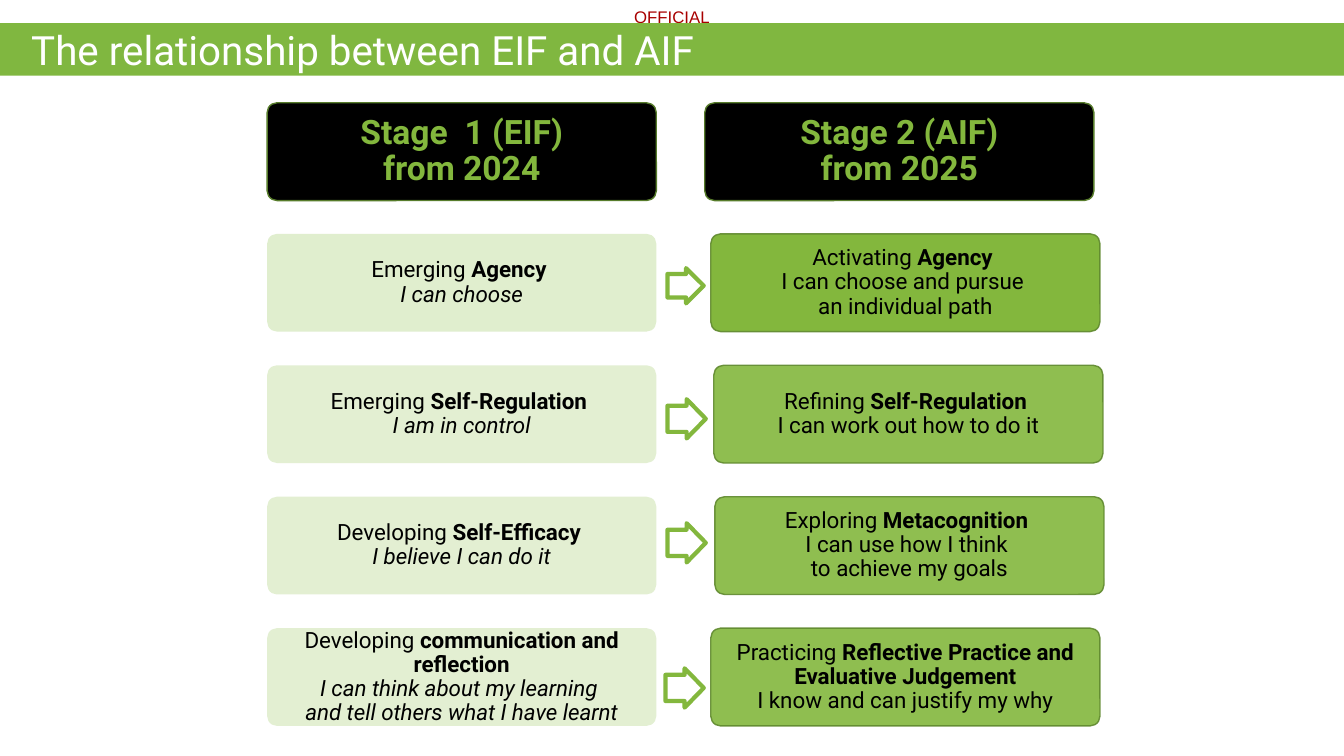
from lxml import etree
from pptx import Presentation
from pptx.dml.color import RGBColor
from pptx.enum import shapes, text
from pptx.oxml import ns
from pptx.util import Inches, Pt

WHITE = RGBColor(0xFF, 0xFF, 0xFF)
BLACK = RGBColor(0, 0, 0)
RED = RGBColor(0xA8, 0, 0)
BAND_GREEN = RGBColor(0x80, 0xB7, 0x40)
GREEN = RGBColor(0x83, 0xB7, 0x3D)
PALE_GREEN = RGBColor(0xE0, 0xEE, 0xCE)
HEADING_EDGE = RGBColor(0x57, 0x7C, 0x2B)
CARD_EDGE = RGBColor(0x60, 0x89, 0x2F)

CARD_WIDTH, CARD_HEIGHT = 3.86, 0.97
CARD_TOP, CARD_PITCH = 2.32, 1.304
LEFT_COLUMN, RIGHT_COLUMN = 2.65, 6.99

STAGE_ONE = [
    ("Emerging ", "Agency ", ["I can choose"]),
    ("Emerging\u00a0", "Self-Regulation\u00a0", ["I am in\u00a0control"]),
    ("Developing\u00a0", "Self-Efficacy\u00a0", ["I\u00a0believe I can do it"]),
    ("Developing ", "communication and reflection",
     ["I can think about my learning ", "and tell others what I have learnt"]),
]
STAGE_TWO = [
    ("Activating ", "Agency ", ["I can choose and pursue ", "an individual path"]),
    ("Refining ", "Self-Regulation ", ["I can work out how to do it"]),
    ("Exploring ", "Metacognition ", ["I can use how I think ", "to achieve my goals"]),
    ("Practicing ", "Reflective Practice and Evaluative Judgement",
     ["I know and can justify my why"]),
]
STAGE_TWO_LEFTS = [7.05, 7.08, 7.09, 7.05]
ARROWS = [(6.62, 2.66, 0.36, 0.35), (6.62, 3.96, 0.38, 0.39),
          (6.62, 5.19, 0.38, 0.39), (6.6, 6.63, 0.38, 0.39)]


def add_text(para, words, size=16, color=BLACK, font="Roboto", bold=False, italic=False):
    """Append one formatted span to a paragraph."""
    span = para.add_run()
    span.text = words
    span.font.size = Pt(size)
    span.font.name = font
    span.font.bold = bold
    span.font.italic = italic
    span.font.color.rgb = color


def set_alpha(fill_owner, percent):
    """Make every solid colour of a shape's fill or line translucent."""
    for color in fill_owner.iter(ns.qn("a:srgbClr")):
        etree.SubElement(color, ns.qn("a:alpha")).set("val", str(percent * 1000))


def add_box(page, kind, box, fill, edge=None, edge_width=1):
    """Draw a flat preset shape in the given box."""
    shape = page.shapes.add_shape(kind, *map(Inches, box))
    shape.shadow.inherit = False
    shape.fill.solid()
    shape.fill.fore_color.rgb = fill
    if edge is None:
        shape.line.fill.background()
    else:
        shape.line.color.rgb = edge
        shape.line.width = Pt(edge_width)
    return shape


def add_card(page, left, top, fill, edge=None, margin=0.02):
    """Draw a rounded card and return it with its centred paragraph."""
    card = add_box(page, shapes.MSO_SHAPE.ROUNDED_RECTANGLE,
                   (left, top, CARD_WIDTH, CARD_HEIGHT), fill, edge)
    card.adjustments[0] = 0.1
    frame = card.text_frame
    frame.word_wrap = True
    frame.vertical_anchor = text.MSO_ANCHOR.MIDDLE
    frame.margin_left = frame.margin_right = Inches(margin)
    frame.margin_top = frame.margin_bottom = Inches(margin)
    para = frame.paragraphs[0]
    para.alignment = text.PP_ALIGN.CENTER
    para.line_spacing = 0.9
    return card, para


def add_heading(page, left, lines):
    """Draw the black heading card of a column."""
    para = add_card(page, left, 1.02, BLACK, HEADING_EDGE, margin=0.03)[1]
    for index, line in enumerate(lines):
        if index:
            para.add_line_break()
        add_text(para, line, size=24, color=GREEN, bold=True)


def add_column(page, lefts, skills, fill, edge=None, italic=False):
    """Stack the skill cards of one stage."""
    for row, (left, (lead, skill, statement)) in enumerate(zip(lefts, skills)):
        card, para = add_card(page, left, CARD_TOP + row * CARD_PITCH, fill, edge)
        if row:
            set_alpha(card.fill._xPr.find(ns.qn("a:solidFill")), 90)
        if edge is not None:
            set_alpha(card.line._ln, 90)
        add_text(para, lead)
        add_text(para, skill, bold=True)
        for line in statement:
            para.add_line_break()
            add_text(para, line, italic=italic)


def add_header(page):
    """Place the marking, the green band and the title."""
    marking = page.shapes.add_textbox(*map(Inches, (6.29, 0.07, 0.8, 0.2))).text_frame
    marking.margin_left = marking.margin_right = 0
    marking.margin_top = marking.margin_bottom = 0
    add_text(marking.paragraphs[0], "OFFICIAL", size=12, color=RED, font="Arial")

    band = add_box(page, shapes.MSO_SHAPE.RECTANGLE, (0, 0.23, 13.33, 0.52), BAND_GREEN)
    title = page.shapes.title
    band._element.addnext(title._element)
    title.left, title.top, title.width, title.height = map(Inches, (0.21, 0.3, 11.5, 0.45))
    title.text_frame.vertical_anchor = text.MSO_ANCHOR.MIDDLE
    title.text_frame.auto_size = text.MSO_AUTO_SIZE.NONE
    para = title.text_frame.paragraphs[0]
    para.alignment = text.PP_ALIGN.LEFT
    para.line_spacing = 0.9
    add_text(para, "The relationship between EIF and AIF", size=28.8, color=WHITE)


def add_arrows(page):
    """Draw the arrows leading from stage 1 to stage 2."""
    for box in ARROWS:
        arrow = add_box(page, shapes.MSO_SHAPE.RIGHT_ARROW, box, WHITE, GREEN, 3)
        arrow.adjustments[0] = 0.667
        arrow.adjustments[1] = 0.5


def main():
    """Build the slide and save it."""
    deck = Presentation()
    deck.slide_width, deck.slide_height = Inches(13.33), Inches(7.5)
    page = deck.slides.add_slide(deck.slide_layouts[5])
    add_header(page)
    add_heading(page, LEFT_COLUMN, ["Stage  1 (EIF)", "from 2024"])
    add_heading(page, RIGHT_COLUMN, ["Stage 2 (AIF)", "from 2025"])
    add_column(page, [LEFT_COLUMN] * 4, STAGE_ONE, PALE_GREEN, italic=True)
    add_column(page, STAGE_TWO_LEFTS, STAGE_TWO, GREEN, CARD_EDGE)
    add_arrows(page)
    deck.save("out.pptx")


if __name__ == "__main__":
    main()
